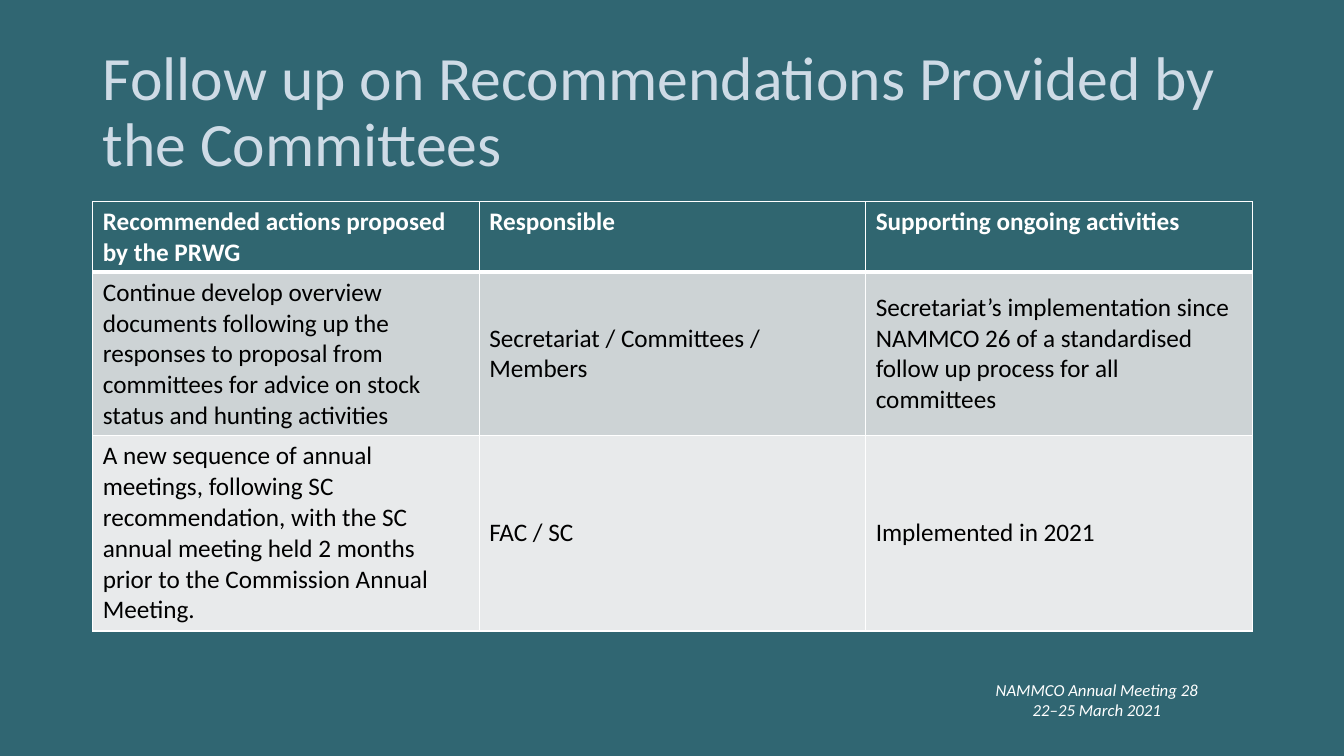
from lxml.etree import SubElement
from pptx import Presentation
from pptx.dml.color import RGBColor
from pptx.enum.text import MSO_ANCHOR, PP_ALIGN
from pptx.oxml.ns import qn
from pptx.util import Inches, Pt

TEAL = RGBColor(0x30, 0x66, 0x72)
HEAD = RGBColor(0x30, 0x66, 0x70)
PALE = RGBColor(0xCE, 0xDB, 0xE6)
GREY = RGBColor(0xCD, 0xD3, 0xD5)
LIGHT = RGBColor(0xE8, 0xEA, 0xEB)
WHITE = RGBColor(0xFF, 0xFF, 0xFF)
BLACK = RGBColor(0, 0, 0)


def write(frame, text, size=18, color=BLACK, bold=False, italic=False,
          align=PP_ALIGN.LEFT, space=1.0, anchor=MSO_ANCHOR.MIDDLE):
    frame.word_wrap = True
    frame.vertical_anchor = anchor
    frame.text = text
    for para in frame.paragraphs:
        para.alignment = align
        para.line_spacing = space
        font = para.font
        font.name = "Calibri"
        font.size = Pt(size)
        font.bold = bold
        font.italic = italic
        font.color.rgb = color


def border(cell, side, width):
    line = SubElement(cell._tc.get_or_add_tcPr(), qn(f"a:ln{side}"), w=str(Pt(width)))
    fill = SubElement(line, qn("a:solidFill"))
    SubElement(fill, qn("a:srgbClr"), val=str(WHITE))


deck = Presentation()
deck.slide_width = Inches(13.33)
deck.slide_height = Inches(7.5)
slide = deck.slides.add_slide(deck.slide_layouts[6])
slide.background.fill.solid()
slide.background.fill.fore_color.rgb = TEAL

footer = slide.shapes.add_textbox(Inches(9.73), Inches(6.74), Inches(2.3), Inches(0.4))
write(footer.text_frame, "NAMMCO Annual Meeting 28\n22–25 March 2021",
      size=12, color=WHITE, italic=True, align=PP_ALIGN.CENTER)

title = slide.shapes.add_textbox(Inches(0.92), Inches(0.4), Inches(11.5), Inches(1.45))
write(title.text_frame, "Follow up on Recommendations Provided by the Committees",
      size=44, color=PALE, space=0.9)

rows = [
    ("Recommended actions proposed by the PRWG",
     "Responsible",
     "Supporting ongoing activities"),
    ("Continue develop overview documents following up the responses to proposal "
     "from committees for advice on stock status and hunting activities",
     "Secretariat / Committees / Members",
     "Secretariat’s implementation since NAMMCO 26 of a standardised follow up "
     "process for all committees"),
    ("A new sequence of annual meetings, following SC recommendation, with the SC "
     "annual meeting held 2 months prior to the Commission Annual Meeting.",
     "FAC / SC",
     "Implemented in 2021"),
]
fills = [HEAD, GREY, LIGHT]
heights = [0.7, 1.62, 1.94]

table = slide.shapes.add_table(3, 3, Inches(0.92), Inches(2), Inches(11.5),
                               Inches(sum(heights))).table
for col in table.columns:
    col.width = Inches(11.5 / 3)
for r, texts in enumerate(rows):
    table.rows[r].height = Inches(heights[r])
    top = r == 0
    for c, text in enumerate(texts):
        cell = table.cell(r, c)
        write(cell.text_frame, text, color=WHITE if top else BLACK, bold=top)
        cell.vertical_anchor = MSO_ANCHOR.TOP if top else MSO_ANCHOR.MIDDLE
        widths = {"L": 1, "R": 1, "T": 3 if r == 1 else 1, "B": 3 if top else 1}
        for side, width in widths.items():
            border(cell, side, width)
        cell.fill.solid()
        cell.fill.fore_color.rgb = fills[r]

deck.save("out.pptx")
